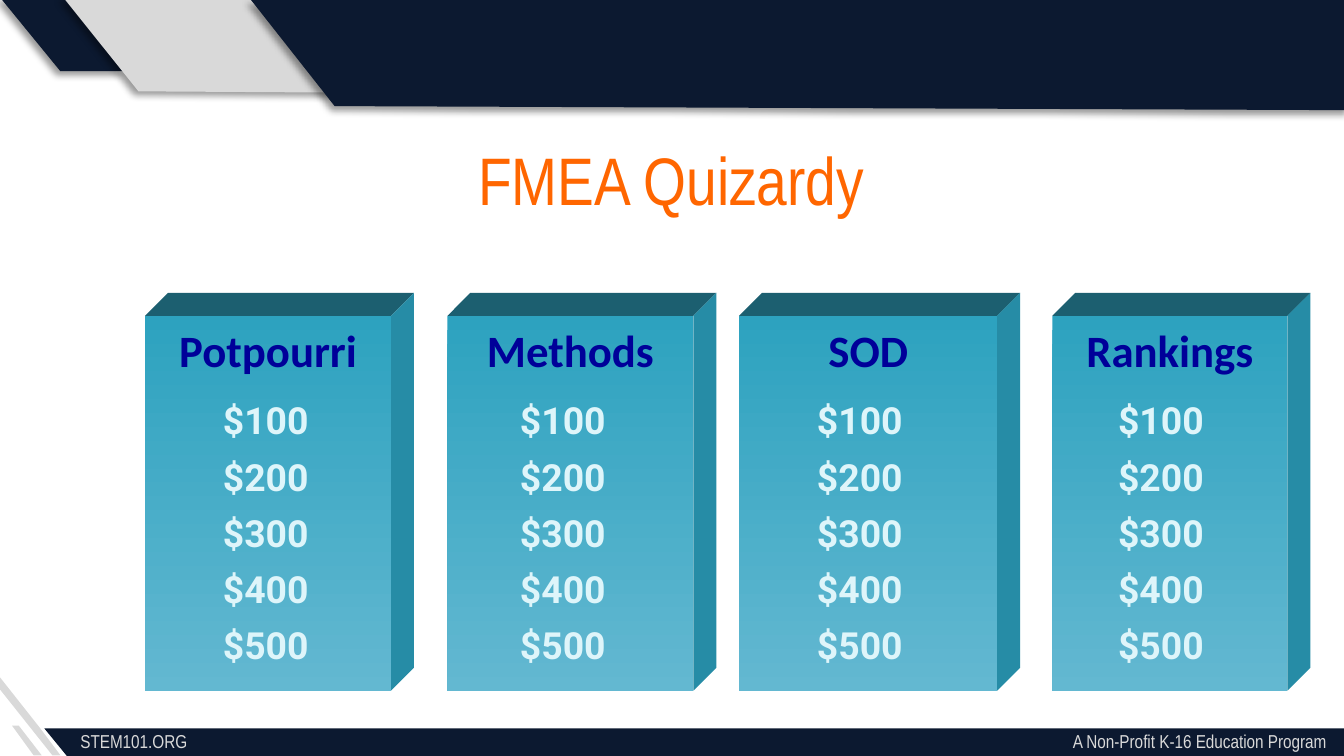
from lxml import etree
from pptx import Presentation
from pptx import util as u
from pptx.dml.color import RGBColor
from pptx.enum import shapes, text
from pptx.oxml import parse_xml
from pptx.oxml.ns import nsdecls, qn

NAVY, GREY = "0C1930", "D9D9D9"
DEPTH = 0.17
VALUES = ["$100", "$200", "$300", "$400", "$500"]
CARDS = [
    ("Potpourri", 1.08, 1.83, 0.48),
    ("Methods", 3.33, 1.83, 0.44),
    ("SOD", 5.5, 1.92, 0.48),
    ("Rankings", 7.83, 1.75, 0.39),
]


def color(value):
    return RGBColor.from_string(value)


def add_shadow(shape):
    effects = shape._element.spPr.find(qn("a:effectLst"))
    effects.append(parse_xml(
        f'<a:outerShdw {nsdecls("a")} blurRad="50800" dist="38100" dir="8100000" '
        'algn="tr" rotWithShape="0"><a:srgbClr val="000000">'
        '<a:alpha val="40000"/></a:srgbClr></a:outerShdw>'))


def add_polygon(page, left, top, points, fill, shadow=False):
    corners = [(u.Inches(left + x), u.Inches(top + y)) for x, y in points]
    builder = page.shapes.build_freeform(*corners[0], scale=1.0)
    builder.add_line_segments(corners[1:], close=True)
    shape = builder.convert_to_shape()
    shape.fill.solid()
    shape.fill.fore_color.rgb = color(fill)
    shape.line.fill.background()
    shape.shadow.inherit = False
    if shadow:
        add_shadow(shape)


def style_paragraph(para, font, size, fill, bold=False):
    para.font.name = font
    para.font.size = u.Pt(size)
    para.font.bold = bold
    para.font.color.rgb = color(fill)


def add_text(page, left, top, width, height, words):
    box = page.shapes.add_textbox(*map(u.Inches, (left, top, width, height)))
    box.text_frame.word_wrap = True
    para = box.text_frame.paragraphs[0]
    para.text = words
    return para


def add_header(page, left, top, width):
    bands = [
        ([(0, -0.02), (0.48, -0.02), (0.93, 0.53), (0.45, 0.53)], NAVY),
        ([(0.47, -0.02), (2.04, -0.02), (2.59, 0.69), (1.03, 0.68)], GREY),
        ([(1.86, -0.01), (width + 0.02, -0.01), (width + 0.04, 0.82), (2.49, 0.79)], NAVY),
    ]
    for points, fill in bands:
        add_polygon(page, left, top, points, fill, shadow=True)


def add_footer(page, left, top, width, height):
    add_polygon(page, left, top,
                [(0.09, 0.36), (0.14, 0.36), (0.31, height), (0.25, height)], GREY)
    add_polygon(page, left, top,
                [(0, 0), (0.3, 0.38), (0.45, height), (0.39, height), (0, 0.09)], GREY)
    add_polygon(page, left, top,
                [(0.33, 0.38), (width + 0.07, 0.38), (width + 0.06, 0.61), (0.51, 0.6)], NAVY)
    para = add_text(page, left + 0.5, top + 0.34, width - 0.5, 0.27,
                    "STEM101.ORG\tA Non-Profit K-16 Education Program")
    stops = etree.SubElement(para._p.get_or_add_pPr(), qn("a:tabLst"))
    etree.SubElement(stops, qn("a:tab"), pos=str(u.Inches(9.27)), algn="r")
    style_paragraph(para, "Arial Narrow", 10, GREY)


def add_title(page, left, top, width, height):
    para = add_text(page, left, top, width, height, "FMEA Quizardy")
    para.alignment = text.PP_ALIGN.CENTER
    style_paragraph(para, "Arial Narrow", 36, "FF6600")


def add_card(page, left, top, width, height, heading, value_indent):
    add_polygon(page, left, top,
                [(0, 0), (DEPTH, -DEPTH), (width + DEPTH, -DEPTH), (width, 0)], "1C5F70")
    add_polygon(page, left + width, top,
                [(0, 0), (DEPTH, -DEPTH), (DEPTH, height - DEPTH), (0, height)], "268CA6")
    front = page.shapes.add_shape(
        shapes.MSO_SHAPE.RECTANGLE, *map(u.Inches, (left, top, width, height)))
    front.shadow.inherit = False
    front.line.fill.background()
    front.fill.gradient()
    front.fill.gradient_angle = 270
    for stop, shade in zip(front.fill.gradient_stops, ("2DA2BF", "63B8D1")):
        stop.color.rgb = color(shade)
    front.text_frame.vertical_anchor = text.MSO_ANCHOR.TOP
    para = front.text_frame.paragraphs[0]
    para.text = heading
    para.alignment = text.PP_ALIGN.CENTER
    style_paragraph(para, "Calibri", 24, "000099", bold=True)
    for row, value in enumerate(VALUES):
        para = add_text(page, left + value_indent, top + 0.56 + row * 1.67 / 4,
                        0.92, 0.43, value)
        style_paragraph(para, "Roboto", 20, "DEF5FA", bold=True)


def main():
    deck = Presentation()
    deck.slide_width, deck.slide_height = u.Inches(10), u.Inches(10 * 9 / 16)
    page = deck.slides.add_slide(deck.slide_layouts[6])
    add_header(page, 0, 0, 10)
    add_footer(page, 0, 5.04, 10, 0.58)
    add_title(page, 2, 0.98, 5.99, 1.11)
    for heading, left, width, value_indent in CARDS:
        add_card(page, left, 2.35, width, 2.79, heading, value_indent)
    deck.save("out.pptx")


if __name__ == "__main__":
    main()
